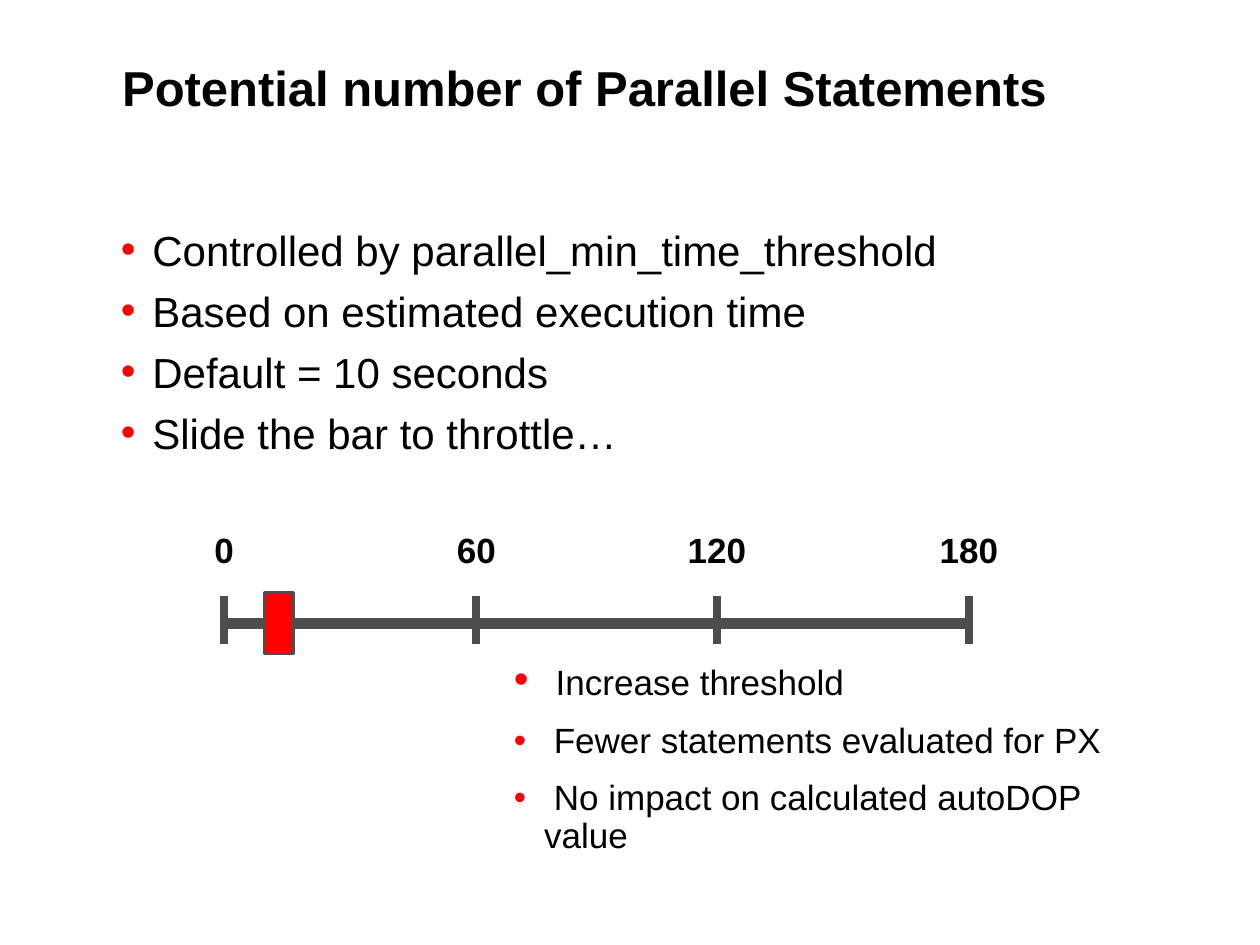
from dataclasses import dataclass

from lxml.etree import SubElement
from pptx import Presentation
from pptx.dml.color import RGBColor
from pptx.enum.shapes import MSO_CONNECTOR, MSO_SHAPE
from pptx.enum.text import PP_ALIGN
from pptx.oxml.ns import qn
from pptx.util import Inches, Pt


@dataclass(frozen=True)
class Theme:
    """Colours and type sizes of the slide."""
    font: str = "Arial"
    ink: RGBColor = RGBColor(0, 0, 0)
    red: RGBColor = RGBColor(255, 0, 0)
    gray: RGBColor = RGBColor(0x4D, 0x4D, 0x4D)
    title: int = 28
    body: int = 24
    small: int = 20


THEME = Theme()


def add_text(slide, box, inset=None):
    """Add a wrapping text box and return its frame."""
    frame = slide.shapes.add_textbox(*map(Inches, box)).text_frame
    frame.word_wrap = True
    if inset is not None:
        frame.margin_left = frame.margin_right = frame.margin_bottom = 0
        frame.margin_top = Inches(inset)
    return frame


def style(par, size, bold=False):
    """Set the font of a paragraph."""
    font = par.font
    font.name, font.size, font.bold = THEME.font, Pt(size), bold
    font.color.rgb = THEME.ink


def add_bullet(par, hang):
    """Give a paragraph a red bullet and a hanging indent."""
    props = par._p.get_or_add_pPr()
    props.set("marL", str(Inches(hang)))
    props.set("indent", str(-Inches(hang)))
    color = SubElement(props, qn("a:buClr"))
    SubElement(color, qn("a:srgbClr"), val=str(THEME.red))
    SubElement(props, qn("a:buFont"), typeface=THEME.font)
    SubElement(props, qn("a:buChar"), char="•")


def add_list(frame, items, size, hang, gap, lead=1.0):
    """Fill a frame with bulleted items, each a list of runs."""
    for i, runs in enumerate(items):
        par = frame.paragraphs[0] if i == 0 else frame.add_paragraph()
        par.line_spacing = lead
        par.space_before = Pt(gap if i else 0)
        add_bullet(par, hang)
        style(par, size)
        for text, own in runs:
            run = par.add_run()
            run.text = text
            if own:
                run.font.size = Pt(own)


def add_title(slide, box):
    """Place the slide title."""
    par = add_text(slide, box, 0.03).paragraphs[0]
    par.text = "Potential number of Parallel Statements"
    style(par, THEME.title, True)


def add_body(slide, box):
    """Place the main bullet list."""
    lines = (
        "Controlled by parallel_min_time_threshold",
        "Based on estimated execution time",
        "Default = 10 seconds",
        "Slide the bar to throttle…",
    )
    items = [[(line, None)] for line in lines]
    add_list(add_text(slide, box, 0.03), items, THEME.body, 0.25, 6)


def add_line(slide, start, end, width):
    """Draw a plain gray line."""
    line = slide.shapes.add_connector(
        MSO_CONNECTOR.STRAIGHT, *map(Inches, (*start, *end)))
    line.line.color.rgb = THEME.gray
    line.line.width = Pt(width)
    SubElement(line._element.spPr, qn("a:effectLst"))


def add_label(slide, mid, top, text):
    """Center a scale label above its tick."""
    wide = 0.2 + 0.16 * len(text)
    frame = add_text(slide, (mid - wide / 2, top, wide, 0.4))
    frame.word_wrap = False
    par = frame.paragraphs[0]
    par.text = text
    par.alignment = PP_ALIGN.CENTER
    par.line_spacing = 0.9
    style(par, THEME.small, True)


def add_scale(slide, box):
    """Draw the threshold scale with its ticks, labels and handle."""
    left, top, wide, high = box
    axis = top + 0.77
    add_line(slide, (left, axis), (left + wide, axis), 6)
    ticks = {"0": 0, "60": 2, "120": 3.91, "180": 5.91}
    for text, step in ticks.items():
        mid = left + step
        add_line(slide, (mid, top + 0.55), (mid, top + 0.93), 4.5)
        add_label(slide, mid, top, text)
    knob = slide.shapes.add_shape(
        MSO_SHAPE.RECTANGLE,
        *map(Inches, (left + 0.32, top + high - 0.49, 0.23, 0.49)))
    knob.shadow.inherit = False
    knob.fill.solid()
    knob.fill.fore_color.rgb = THEME.red
    knob.line.color.rgb = THEME.gray
    knob.line.width = Pt(1.5)


def add_notes(slide, box):
    """Place the list of effects under the scale."""
    items = [
        [(" ", THEME.body), ("Increase threshold", THEME.small)],
        [(" Fewer statements evaluated for PX", None)],
        [(" No impact on calculated autoDOP value", None)],
    ]
    add_list(add_text(slide, box), items, THEME.small, 0.24, 11, 0.9)


def main():
    """Build and save the slide."""
    deck = Presentation()
    deck.slide_width, deck.slide_height = Inches(10), Inches(7.5)
    slide = deck.slides.add_slide(deck.slide_layouts[6])
    add_title(slide, (0.97, 0.43, 8.29, 0.94))
    add_body(slide, (0.96, 1.75, 8.24, 1.89))
    add_scale(slide, (1.78, 4.18, 5.93, 1.01))
    add_notes(slide, (3.98, 5.18, 5.34, 1.41))
    deck.save("out.pptx")


if __name__ == "__main__":
    main()
